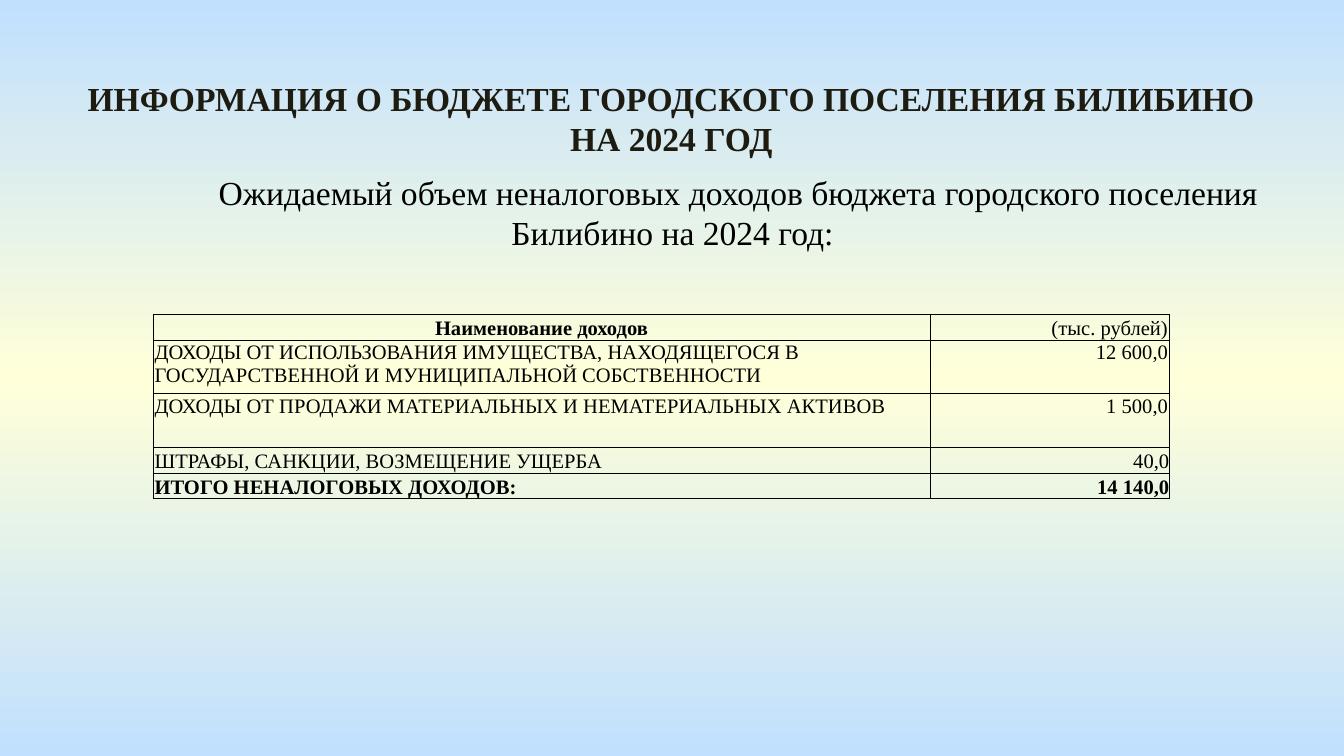
from copy import deepcopy

from lxml.etree import SubElement
from pptx import Presentation
from pptx.dml.color import RGBColor
from pptx.enum.text import MSO_ANCHOR, MSO_AUTO_SIZE, PP_ALIGN
from pptx.oxml.ns import qn
from pptx.util import Inches, Pt

BLUE = RGBColor(0xC1, 0xE0, 0xFF)
YELLOW = RGBColor(0xFF, 0xFF, 0xD9)
DARK = RGBColor(0x1E, 0x1C, 0x11)
BLACK = RGBColor(0, 0, 0)


def write(frame, text, align, size, color, bold=False):
    paragraph = frame.paragraphs[0]
    paragraph.alignment = align
    run = paragraph.add_run()
    run.text = text
    font_format = {"name": "Times New Roman", "size": Pt(size), "bold": bold}
    for name, value in font_format.items():
        setattr(run.font, name, value)
    run.font.color.rgb = color
    return paragraph


def add_borders(cell, color, width):
    properties = cell._tc.get_or_add_tcPr()
    for index, side in enumerate(("lnL", "lnR", "lnT", "lnB")):
        line = SubElement(properties, qn(f"a:{side}"), w=str(Pt(width)))
        solid = SubElement(line, qn("a:solidFill"))
        SubElement(solid, qn("a:srgbClr"), val=str(color))
        properties.insert(index, line)


# Widescreen slide, 16:9
prs = Presentation()
prs.slide_width = Inches(10)
prs.slide_height = prs.slide_width * 9 // 16
slide = prs.slides.add_slide(prs.slide_layouts[5])

# Background: blue, yellow, blue from top to bottom
background = slide.background.fill
background.gradient()
background.gradient_angle = 90
stop_list = slide.element.find(".//" + qn("a:gsLst"))
stop_list.append(deepcopy(stop_list[0]))
for stop, position, color in zip(background.gradient_stops, (0, 0.5, 1), (BLUE, YELLOW, BLUE)):
    stop.position = position
    stop.color.rgb = color

# Title and subtitle
title = slide.shapes.title
title.left, title.top, title.width, title.height = map(Inches, (0.39, 0.53, 9.21, 0.71))
subtitle = slide.shapes.add_textbox(*map(Inches, (0.26, 1.23, 9.49, 0.71)))
frame_format = {
    "word_wrap": True,
    "auto_size": MSO_AUTO_SIZE.NONE,
    "vertical_anchor": MSO_ANCHOR.TOP,
}
for heading in (title, subtitle):
    for name, value in frame_format.items():
        setattr(heading.text_frame, name, value)
write(title.text_frame, "ИНФОРМАЦИЯ О БЮДЖЕТЕ ГОРОДСКОГО ПОСЕЛЕНИЯ БИЛИБИНО НА 2024 ГОД",
      PP_ALIGN.CENTER, 18, DARK, bold=True)
intro = write(subtitle.text_frame,
              "Ожидаемый объем неналоговых доходов бюджета городского поселения Билибино на 2024 год:",
              PP_ALIGN.CENTER, 18, BLACK)
intro._p.get_or_add_pPr().set("indent", str(Inches(0.98)))

# Income table: name, amount, row height, anchor
TOP, BOTTOM = MSO_ANCHOR.TOP, MSO_ANCHOR.BOTTOM
incomes = [
    ("Наименование доходов", "(тыс. рублей)", 0.19, BOTTOM),
    ("ДОХОДЫ ОТ ИСПОЛЬЗОВАНИЯ ИМУЩЕСТВА, НАХОДЯЩЕГОСЯ В "
     "ГОСУДАРСТВЕННОЙ И МУНИЦИПАЛЬНОЙ СОБСТВЕННОСТИ", "12 600,0", 0.4, TOP),
    ("ДОХОДЫ ОТ ПРОДАЖИ МАТЕРИАЛЬНЫХ И НЕМАТЕРИАЛЬНЫХ АКТИВОВ", "1 500,0", 0.4, TOP),
    ("ШТРАФЫ, САНКЦИИ, ВОЗМЕЩЕНИЕ УЩЕРБА", "40,0", 0.19, BOTTOM),
    ("ИТОГО НЕНАЛОГОВЫХ ДОХОДОВ:", "14 140,0", 0.19, BOTTOM),
]
HEADER, TOTAL = 0, len(incomes) - 1
table = slide.shapes.add_table(len(incomes), 2, *map(Inches, (1.14, 2.34, 7.56, 1.36))).table
table.first_row = table.horz_banding = False
for column, width in zip(table.columns, (5.78, 1.78)):
    column.width = Inches(width)

for r, (income, amount, height, anchor) in enumerate(incomes):
    table.rows[r].height = Inches(height)
    for c, text in enumerate((income, amount)):
        cell = table.cell(r, c)
        margin = Inches(0 if c == 1 and r >= TOTAL - 1 else 0.01)
        cell_format = {
            "margin_left": margin, "margin_right": margin, "margin_top": margin,
            "margin_bottom": 0, "vertical_anchor": anchor,
        }
        for name, value in cell_format.items():
            setattr(cell, name, value)
        cell.fill.background()
        add_borders(cell, BLACK, 0.5)
        align = PP_ALIGN.RIGHT if c else PP_ALIGN.CENTER if r == HEADER else PP_ALIGN.LEFT
        write(cell.text_frame, text, align, 11, BLACK, bold=r == TOTAL or (r, c) == (HEADER, 0))

prs.save("out.pptx")
